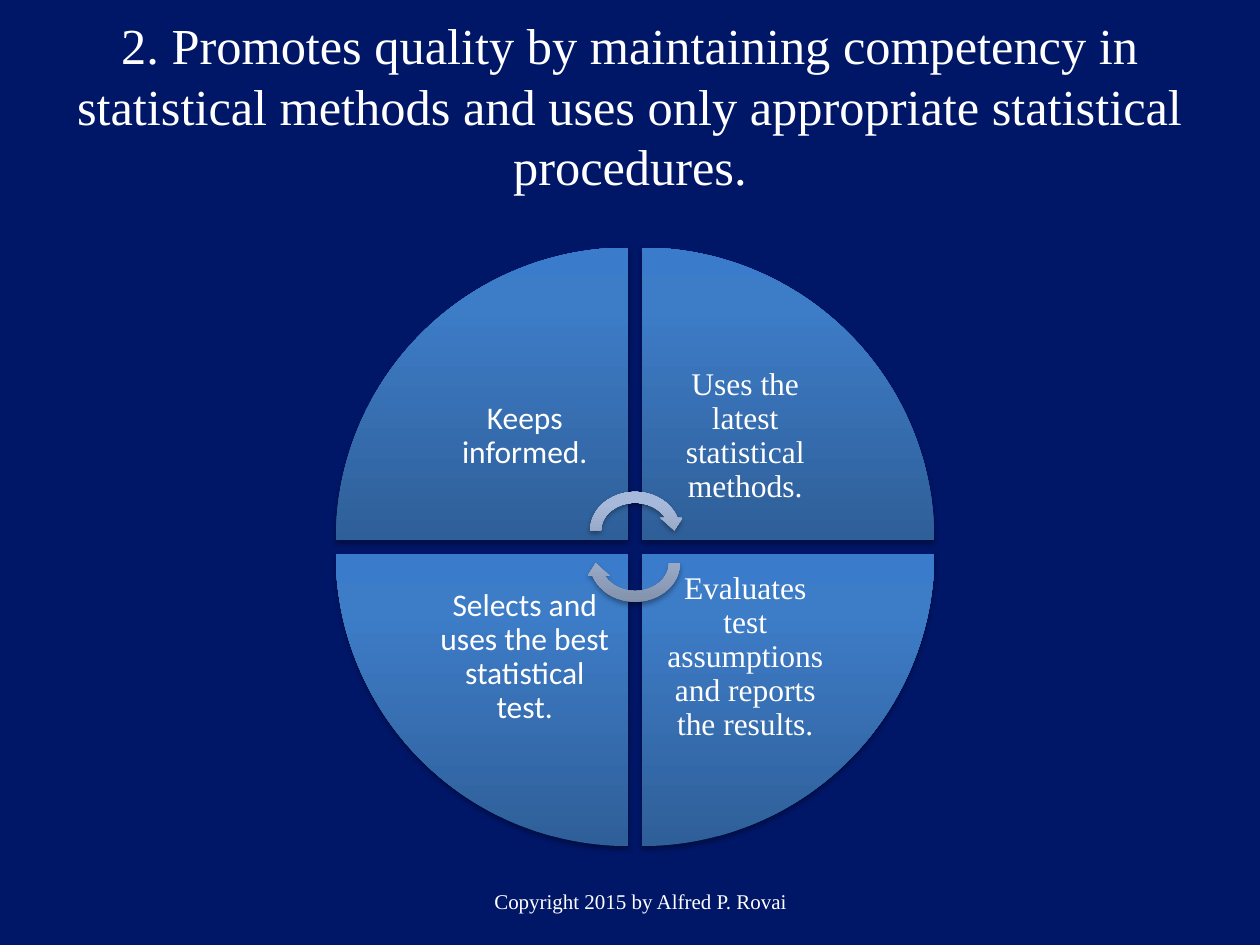
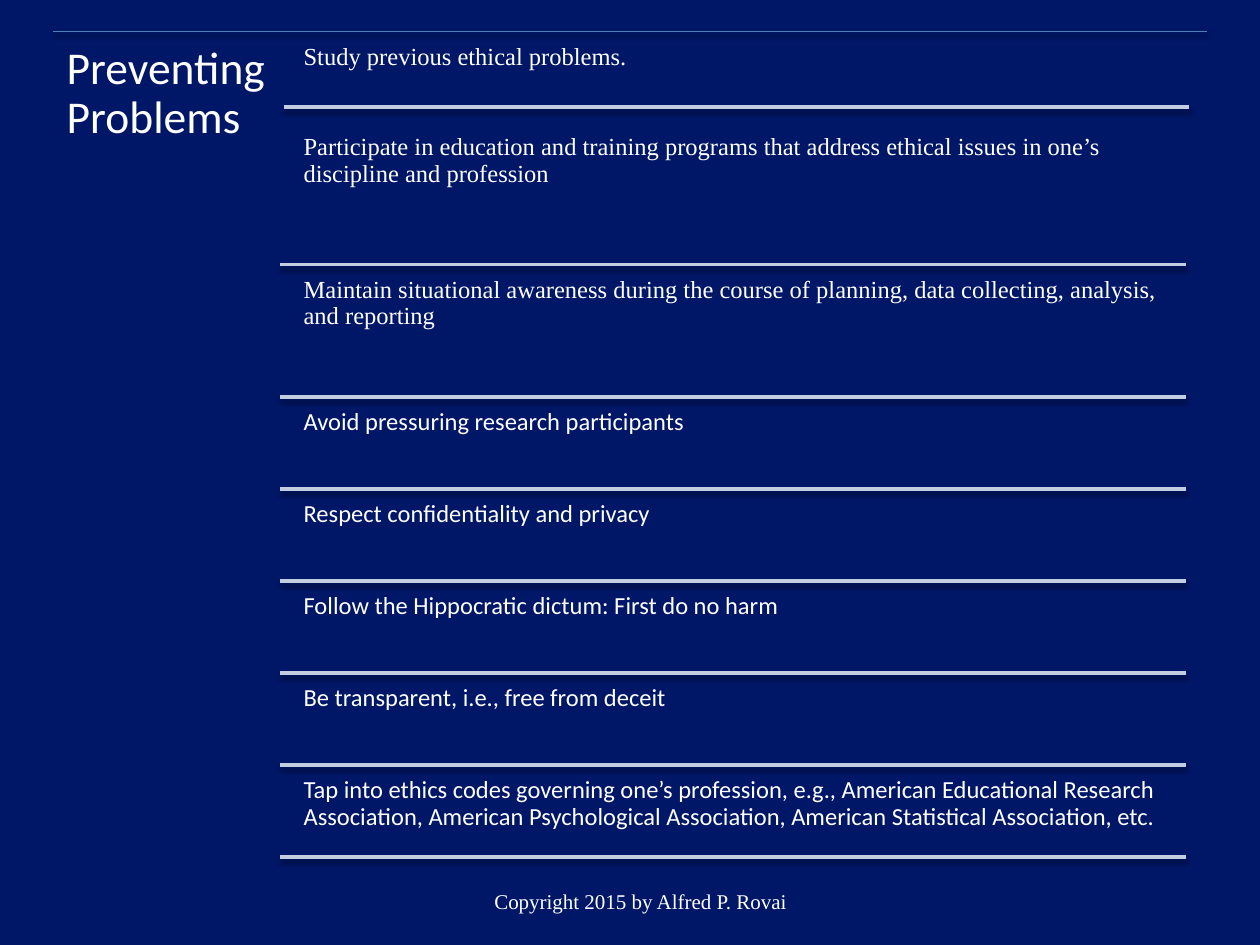
"""Build two slides on ethical statistical practice: a four-part cycle and a ruled list."""
import dataclasses

import pptx
import pptx.dml.color
import pptx.enum.shapes
import pptx.enum.text
import pptx.oxml
import pptx.oxml.ns
import pptx.util

SERIF, SANS = "Times New Roman", "Calibri"

FOOTER = "Copyright 2015 by Alfred P. Rovai"
CYCLE_TITLE = (
    "2. Promotes quality by maintaining competency in statistical methods "
    "and uses only appropriate statistical procedures."
)
# column, row, clockwise turn, wording, font
QUADRANTS = [
    (0, 0, 0, "Keeps informed.", SANS),
    (1, 0, 90, "Uses the latest statistical methods.", SERIF),
    (1, 1, 180, "Evaluates test assumptions and reports the results.", SERIF),
    (0, 1, 270, "Selects and uses the best statistical test.", SANS),
]
LIST_TITLE = "Preventing Problems"
# wording, font, height, gap above, shift of the rule
PRECAUTIONS = [
    ("Study previous ethical problems.", SERIF, 0.56, 0.04, 0.03),
    ("Participate in education and training programs that address ethical issues "
     "in one’s discipline and profession", SERIF, 1.09, 0.16, 0),
    ("Maintain situational awareness during the course of planning, data collecting, "
     "analysis, and reporting", SERIF, 1.01, 0.04, 0),
    ("Avoid pressuring research participants", SANS, 0.69, 0.04, 0),
    ("Respect confidentiality and privacy", SANS, 0.69, 0.04, 0),
    ("Follow the Hippocratic dictum: First do no harm", SANS, 0.69, 0.04, 0),
    ("Be transparent, i.e., free from deceit", SANS, 0.69, 0.04, 0),
    ("Tap into ethics codes governing one’s profession, e.g., American Educational "
     "Research Association, American Psychological Association, American Statistical "
     "Association, etc.", SANS, 0.69, 0.04, 0),
]


@dataclasses.dataclass(frozen=True)
class Theme:
    """Colours and type sizes."""
    background: str = "001667"
    text: str = "FFFFFF"
    top_rule: str = "4F81BD"
    row_rule: str = "C2CDE1"
    wedge: tuple = ((0, "2F5F99"), (80, "3D7CC7"), (100, "3A7CCB"))
    arrow: tuple = ((0, "818FA8"), (80, "A7B9DA"), (100, "A7BADC"))
    title: float = 28.8
    side_title: float = 26
    quadrant: float = 18
    row: float = 14
    footer: float = 12


THEME = Theme()
WIDTH, HEIGHT = 10, 7.5
MARGIN = 0.42
CENTRE_X, CENTRE_Y = 5.04, 4.34
RADIUS, GAP, LABEL = 2.32, 0.11, 1.64
ARROW_WIDTH, ARROW_HEIGHT, ARROW_OFFSET = 0.8, 0.7, 0.13
TOP_RULE = 0.25
RULE_LEFT, RULE_RIGHT = 2.22, 9.41
ROW_LEFT = 2.35

SHAPES = pptx.enum.shapes.MSO_SHAPE
ANCHOR = pptx.enum.text.MSO_ANCHOR
ALIGN = pptx.enum.text.PP_ALIGN


def rgb(value):
    return pptx.dml.color.RGBColor.from_string(value)


def inches(*lengths):
    return [pptx.util.Inches(length) for length in lengths]


def fragment(markup):
    return pptx.oxml.parse_xml(markup.replace(">", f" {pptx.oxml.ns.nsdecls('a')}>", 1))


def add_shadow(properties, opacity, distance):
    for effects in properties.findall(pptx.oxml.ns.qn("a:effectLst")):
        properties.remove(effects)
    properties.append(fragment(
        f'<a:effectLst><a:outerShdw blurRad="{pptx.util.Pt(3.1)}" '
        f'dist="{pptx.util.Pt(distance)}" dir="5400000" rotWithShape="0">'
        f'<a:srgbClr val="000000"><a:alpha val="{opacity * 1000}"/></a:srgbClr>'
        '</a:outerShdw></a:effectLst>'))


def add_text(slide, box, wording, font, size, inset=0.1, spacing=1.0,
             align=ALIGN.LEFT, anchor=ANCHOR.TOP):
    frame = slide.shapes.add_textbox(*inches(*box)).text_frame
    frame.word_wrap = True
    frame.vertical_anchor = anchor
    frame.margin_left = frame.margin_right = pptx.util.Inches(inset)
    frame.margin_top = frame.margin_bottom = pptx.util.Inches(min(inset, 0.05) if spacing == 1 else inset)
    paragraph = frame.paragraphs[0]
    paragraph.text = wording
    paragraph.alignment = align
    paragraph.line_spacing = spacing
    paragraph.font.name = font
    paragraph.font.size = pptx.util.Pt(size)
    paragraph.font.color.rgb = rgb(THEME.text)


def add_gradient_shape(slide, preset, box, turn, stops):
    shape = slide.shapes.add_shape(preset, *inches(*box))
    shape.rotation = turn
    shape.line.fill.background()
    shape.shadow.inherit = False
    shape.fill.background()
    properties = shape.fill._xPr
    stop_list = "".join(
        f'<a:gs pos="{share * 1000}"><a:srgbClr val="{colour}"/></a:gs>' for share, colour in stops)
    properties.replace(properties.find(pptx.oxml.ns.qn("a:noFill")), fragment(
        f'<a:gradFill rotWithShape="0"><a:gsLst>{stop_list}</a:gsLst>'
        '<a:lin ang="16200000" scaled="0"/></a:gradFill>'))
    add_shadow(properties, 35, 1.8)


def add_rule(slide, left, right, y, colour, weight, opacity, distance):
    rule = slide.shapes.add_connector(
        pptx.enum.shapes.MSO_CONNECTOR.STRAIGHT, *inches(left, y, right, y))
    rule.line.color.rgb = rgb(colour)
    rule.line.width = pptx.util.Pt(weight)
    add_shadow(rule._element.spPr, opacity, distance)


def add_slide(deck):
    slide = deck.slides.add_slide(deck.slide_layouts[6])
    slide.background.fill.solid()
    slide.background.fill.fore_color.rgb = rgb(THEME.background)
    add_text(slide, (1.75, 6.95, 6.67, 0.4), FOOTER, SERIF, THEME.footer,
             align=ALIGN.CENTER, anchor=ANCHOR.MIDDLE)
    return slide


def build_cycle(deck):
    slide = add_slide(deck)
    add_text(slide, (MARGIN, 0.17, WIDTH - 2 * MARGIN, 1.33), CYCLE_TITLE, SERIF, THEME.title,
             align=ALIGN.CENTER, anchor=ANCHOR.MIDDLE)

    def quadrant_box(column, row, side):
        offsets = (-GAP / 2 - side, GAP / 2)
        return CENTRE_X + offsets[column], CENTRE_Y + offsets[row], side, side

    for column, row, turn, wording, font in QUADRANTS:
        add_gradient_shape(slide, SHAPES.PIE_WEDGE, quadrant_box(column, row, RADIUS),
                           turn, THEME.wedge)
        add_text(slide, quadrant_box(column, row, LABEL), wording, font, THEME.quadrant,
                 inset=0.14, spacing=0.9, align=ALIGN.CENTER, anchor=ANCHOR.MIDDLE)
    for turn, offset in ((0, -ARROW_OFFSET), (180, ARROW_OFFSET)):
        box = (CENTRE_X - ARROW_WIDTH / 2, CENTRE_Y + offset - ARROW_HEIGHT / 2,
               ARROW_WIDTH, ARROW_HEIGHT)
        add_gradient_shape(slide, SHAPES.CIRCULAR_ARROW, box, turn, THEME.arrow)


def build_precautions(deck):
    slide = add_slide(deck)
    add_rule(slide, MARGIN, WIDTH - MARGIN, TOP_RULE, THEME.top_rule, 0.75, 35, 1.8)
    add_text(slide, (MARGIN, TOP_RULE, 1.8, 6.58), LIST_TITLE, SANS, THEME.side_title,
             inset=0.11, spacing=0.9)
    y = TOP_RULE
    for wording, font, height, gap, shift in PRECAUTIONS:
        y += gap
        add_text(slide, (ROW_LEFT, y, RULE_RIGHT - ROW_LEFT, height), wording, font, THEME.row,
                 inset=0.06, spacing=0.9)
        y += height
        add_rule(slide, RULE_LEFT + shift, RULE_RIGHT + shift, y, THEME.row_rule, 2, 38, 1.6)


def main():
    deck = pptx.Presentation()
    deck.slide_width, deck.slide_height = inches(WIDTH, HEIGHT)
    build_cycle(deck)
    build_precautions(deck)
    deck.save("out.pptx")


if __name__ == "__main__":
    main()
